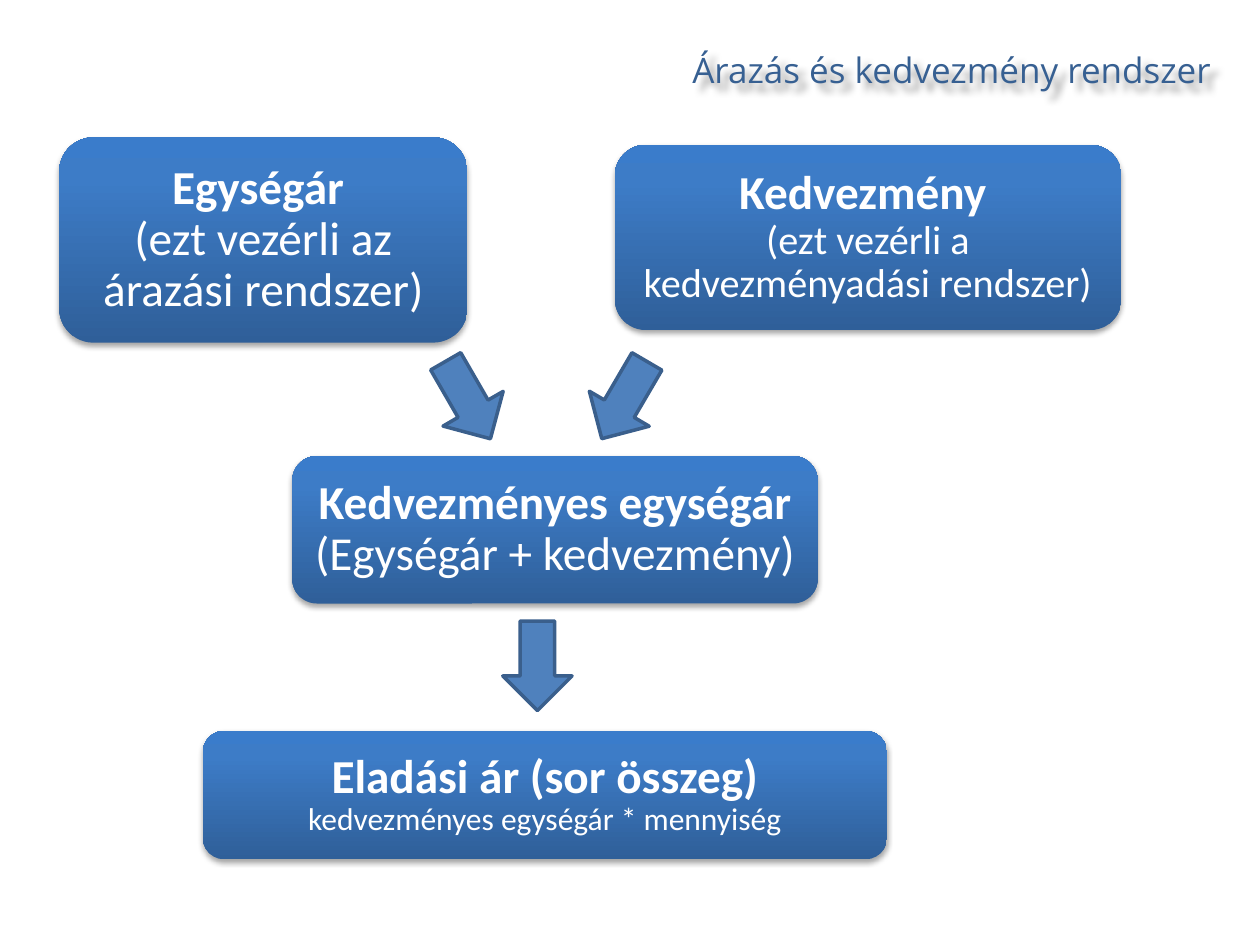
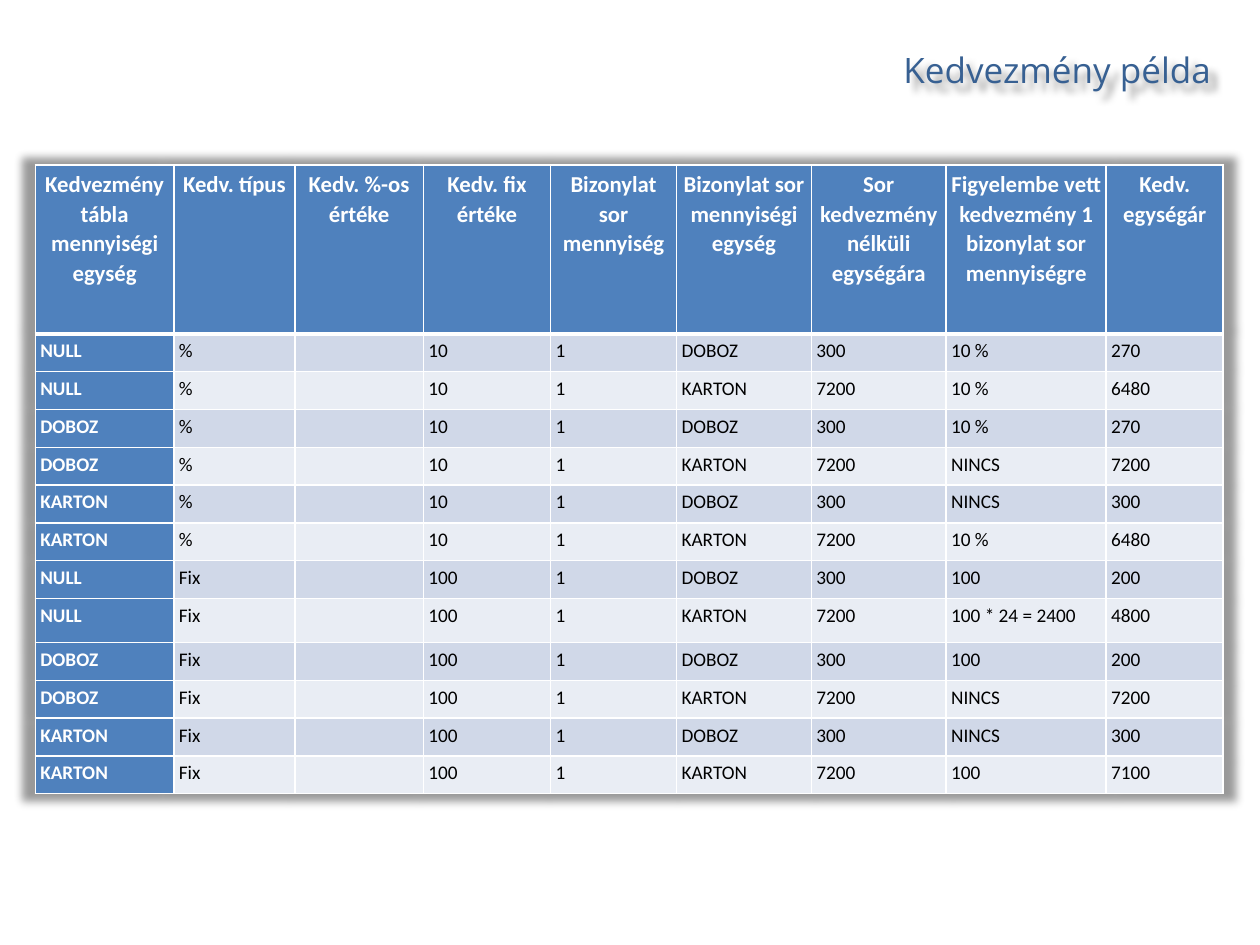
import pptx
import pptx.dml.color
import pptx.enum.shapes
import pptx.enum.text
import pptx.oxml
import pptx.oxml.ns
import pptx.util
from pptx.util import Inches

COLORS = {
    "title": "376092", "accent": "4F81BD", "arrow_line": "3A5F8C",
    "grad_dark": "2F5F99", "grad_mid": "3D7CC7", "grad_light": "3A7CCB",
    "white": "FFFFFF", "black": "000000",
    "band_odd": "D0D8E8", "band_even": "E9EDF4",
}
TITLE_FONT, BODY_FONT = "Open Sans", "Calibri"
TITLE_BOX = (3.28, 0.32, 6.43, 0.46)
NS = pptx.oxml.ns.nsdecls("a")
ALIGN = pptx.enum.text.PP_ALIGN
MIDDLE = pptx.enum.text.MSO_ANCHOR.MIDDLE
SHAPES = pptx.enum.shapes.MSO_SHAPE

# Box, heading, explanation, size of the explanation
PRICE_STEPS = [
    ((0.47, 1.09, 3.24, 1.63), "Egységár ", "(ezt vezérli az árazási rendszer)", 27),
    ((4.88, 1.15, 4.02, 1.47), "Kedvezmény ", "(ezt vezérli a kedvezményadási rendszer)", 23),
    ((2.32, 3.62, 4.17, 1.17), "Kedvezményes egységár", "(Egységár + kedvezmény)", 27),
    ((1.61, 5.8, 5.43, 1.02), "Eladási ár (sor összeg)", "kedvezményes egységár * mennyiség", 18),
]
# Left, top, rotation
ARROWS = [(4.68, 2.82, 30.3), (3.44, 2.82, 330), (3.99, 4.93, 0)]
ARROW_SIZE = (0.55, 0.71)

COLUMNS = [
    ("Kedvezmény tábla mennyiségi egység", 1.1),
    ("Kedv. típus", 0.96),
    ("Kedv. %-os értéke", 1.02),
    ("Kedv. fix értéke", 1.01),
    ("Bizonylat sor mennyiség", 1),
    ("Bizonylat sor mennyiségi egység", 1.07),
    ("Sor kedvezmény nélküli egységára", 1.07),
    ("Figyelembe vett kedvezmény 1 bizonylat sor mennyiségre", 1.27),
    ("Kedv. egységár", 0.93),
]
# Discount type, fixed value, then discount and price for each pair of units
DISCOUNTS = [
    ("%", "10", [("10 %", "270"), ("10 %", "6480"), ("10 %", "270"),
                 ("NINCS", "7200"), ("NINCS", "300"), ("10 %", "6480")]),
    ("Fix", "100", [("100", "200"), ("100 * 24 = 2400", "4800"), ("100", "200"),
                    ("NINCS", "7200"), ("NINCS", "300"), ("100", "7100")]),
]
DISCOUNT_UNITS = ["NULL", "DOBOZ", "KARTON"]
LINE_UNITS = [("DOBOZ", "300"), ("KARTON", "7200")]
HEADER_HEIGHT, ROW_HEIGHT, TALL_ROW, TALL_HEIGHT = 1.34, 0.3, 8, 0.35


def rgb(name):
    return pptx.dml.color.RGBColor.from_string(COLORS[name])


def inches(values):
    return [Inches(value) for value in values]


def write(paragraph, text, size=11, color="white", bold=False, font=BODY_FONT,
          align=ALIGN.LEFT, spacing=1.0):
    paragraph.alignment = align
    paragraph.line_spacing = spacing
    run = paragraph.add_run()
    run.text = text
    run.font.size = pptx.util.Pt(size)
    run.font.color.rgb = rgb(color)
    run.font.bold = bold
    run.font.name = font


def shadow_effect(blur, distance=0, angle=0, alpha=40, scale=100):
    """Effect list with one outer shadow; blur and distance in points."""
    return pptx.oxml.parse_xml(
        f'<a:effectLst {NS}><a:outerShdw blurRad="{pptx.util.Pt(blur)}" '
        f'dist="{pptx.util.Pt(distance)}" dir="{angle * 60000}" '
        f'sx="{scale * 1000}" sy="{scale * 1000}" algn="ctr" rotWithShape="0">'
        f'<a:srgbClr val="{COLORS["black"]}"><a:alpha val="{alpha * 1000}"/>'
        '</a:srgbClr></a:outerShdw></a:effectLst>')


def add_title(slide, box, text):
    title = slide.shapes.add_textbox(*inches(box))
    title.text_frame.word_wrap = True
    title.text_frame.vertical_anchor = MIDDLE
    write(title.text_frame.paragraphs[0], text, size=20, color="title",
          font=TITLE_FONT, align=ALIGN.RIGHT)
    title._element.spPr.append(shadow_effect(4, 6, 45))


def add_price_step(slide, box, heading, explanation, size):
    step = slide.shapes.add_shape(SHAPES.ROUNDED_RECTANGLE, *inches(box))
    step.line.fill.background()
    # Three-stop gradient running upwards
    stops = "".join(
        f'<a:gs pos="{position * 1000}"><a:srgbClr val="{COLORS[name]}"/></a:gs>'
        for position, name in [(0, "grad_dark"), (80, "grad_mid"), (100, "grad_light")])
    properties = step._element.spPr
    properties.find(pptx.oxml.ns.qn("a:ln")).addprevious(pptx.oxml.parse_xml(
        f'<a:gradFill {NS} rotWithShape="1"><a:gsLst>{stops}</a:gsLst>'
        '<a:lin ang="16200000" scaled="0"/></a:gradFill>'))
    properties.append(shadow_effect(3.1, 1.8, 90, 35))

    frame = step.text_frame
    frame.word_wrap = True
    frame.vertical_anchor = MIDDLE
    frame.margin_left = frame.margin_right = Inches(0.11)
    frame.margin_top = frame.margin_bottom = Inches(0.11)
    paragraph = frame.paragraphs[0]
    write(paragraph, heading, size=27, bold=True, align=ALIGN.CENTER, spacing=0.9)
    paragraph.add_line_break()
    write(paragraph, explanation, size=size, align=ALIGN.CENTER, spacing=0.9)


def add_arrow(slide, left, top, rotation):
    arrow = slide.shapes.add_shape(SHAPES.DOWN_ARROW, *inches((left, top, *ARROW_SIZE)))
    arrow.rotation = rotation
    arrow.shadow.inherit = False
    arrow.fill.solid()
    arrow.fill.fore_color.rgb = rgb("accent")
    arrow.line.color.rgb = rgb("arrow_line")
    arrow.line.width = pptx.util.Pt(2)


def discount_rows():
    for kind, value, results in DISCOUNTS:
        pairs = [(unit, line) for unit in DISCOUNT_UNITS for line in LINE_UNITS]
        for (unit, (line_unit, price)), result in zip(pairs, results):
            yield [unit, kind, "", value, "1", line_unit, price, *result]


def style_cell(cell, fill, is_header, below_header):
    cell.margin_left = cell.margin_right = Inches(0.04)
    cell.margin_top = cell.margin_bottom = Inches(0.03)
    # Borders go before the fill in the cell properties
    for side in "LRTB":
        thick = (is_header and side == "B") or (below_header and side == "T")
        cell._tc.get_or_add_tcPr().append(pptx.oxml.parse_xml(
            f'<a:ln{side} {NS} w="{pptx.util.Pt(3 if thick else 1)}"><a:solidFill>'
            f'<a:srgbClr val="{COLORS["white"]}"/></a:solidFill></a:ln{side}>'))
    cell.fill.solid()
    cell.fill.fore_color.rgb = rgb(fill)


def add_discount_table(slide, left, top):
    rows = [[heading for heading, _ in COLUMNS], *discount_rows()]
    heights = [HEADER_HEIGHT] + [ROW_HEIGHT] * (len(rows) - 1)
    heights[TALL_ROW] = TALL_HEIGHT
    widths = [width for _, width in COLUMNS]
    table = slide.shapes.add_table(
        len(rows), len(widths), *inches((left, top, sum(widths), sum(heights)))).table
    table._tbl.tblPr.insert(0, shadow_effect(5, scale=102))
    for column, width in zip(table.columns, widths):
        column.width = Inches(width)

    for r, (values, height) in enumerate(zip(rows, heights)):
        table.rows[r].height = Inches(height)
        for c, value in enumerate(values):
            cell = table.cell(r, c)
            strong = r == 0 or c == 0
            band = "band_odd" if r % 2 else "band_even"
            style_cell(cell, "accent" if strong else band, r == 0, r == 1)
            paragraph = cell.text_frame.paragraphs[0]
            if value:
                write(paragraph, value, size=11 if r else 13, bold=strong,
                      color="white" if strong else "black",
                      align=ALIGN.LEFT if r else ALIGN.CENTER, spacing=1.07)
            else:
                # A small end mark keeps empty cells from stretching the row
                paragraph._p.append(pptx.oxml.parse_xml(f'<a:endParaRPr {NS} sz="1100"/>'))


def build_pricing_slide(slide):
    add_title(slide, TITLE_BOX, "Árazás és kedvezmény rendszer")
    for step in PRICE_STEPS:
        add_price_step(slide, *step)
    for arrow in ARROWS:
        add_arrow(slide, *arrow)


def build_example_slide(slide):
    add_title(slide, TITLE_BOX, "Kedvezmény példa")
    add_discount_table(slide, 0.28, 1.31)


def main():
    deck = pptx.Presentation()
    deck.slide_width, deck.slide_height = Inches(10), Inches(7.5)
    blank = deck.slide_layouts[6]
    for build in (build_pricing_slide, build_example_slide):
        build(deck.slides.add_slide(blank))
    deck.save("out.pptx")


if __name__ == "__main__":
    main()
